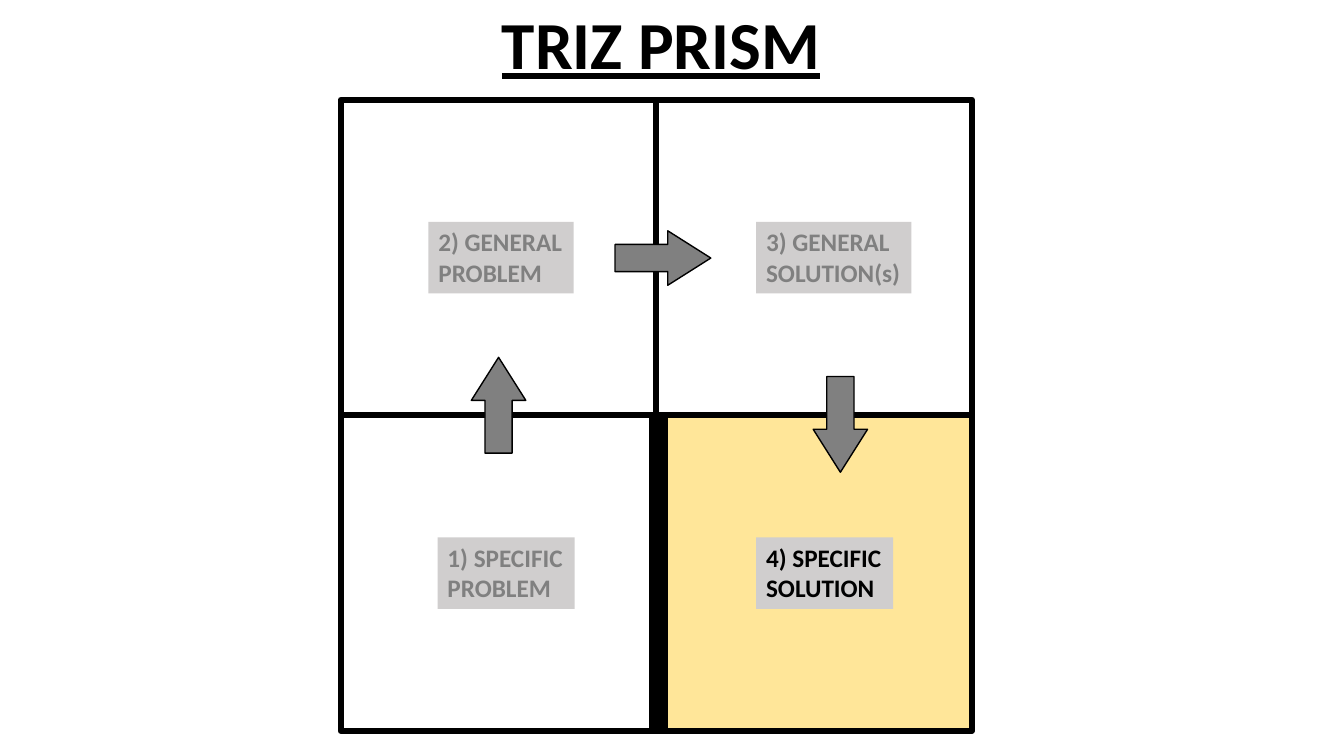
from dataclasses import dataclass

from lxml import etree
from pptx import Presentation
from pptx import util as u
from pptx.dml.color import RGBColor
from pptx.enum import shapes, text
from pptx.oxml.ns import qn

COLORS = {
    "ink": "000000",
    "muted": "808080",
    "label": "D0CECE",
    "highlight": "FFE699",
}
FONT = "Calibri"
GRID_LEFT, GRID_TOP, CELL = 3.38, 0.99, 3.13
LABEL_HEIGHT = 0.71
ARROW_WIDTH, ARROW_HEIGHT = 0.95, 0.54


@dataclass(frozen=True)
class Stage:
    column: int
    row: int
    lines: tuple[str, str]
    left: float
    width: float
    color: str = "muted"
    cell_fill: str | None = None


@dataclass(frozen=True)
class Step:
    left: float
    top: float
    rotation: int


STAGES = (
    Stage(0, 1, ("1) SPECIFIC", "PROBLEM"), 4.34, 1.36),
    Stage(0, 0, ("2) GENERAL", "PROBLEM"), 4.25, 1.44),
    Stage(1, 0, ("3) GENERAL", "SOLUTION(s)"), 7.5, 1.54),
    Stage(1, 1, ("4) SPECIFIC", "SOLUTION"), 7.5, 1.36, "ink", "highlight"),
)
STEPS = (Step(4.47, 3.75, 270), Step(6.1, 2.29, 0), Step(7.86, 3.94, 90))
BARRIER_XS = (6.48, 6.58)


def rgb(name: str) -> RGBColor:
    return RGBColor.from_string(COLORS[name])


def paint(shape, fill: str | None, line_width: float) -> None:
    shape.shadow.inherit = False
    if fill:
        shape.fill.solid()
        shape.fill.fore_color.rgb = rgb(fill)
    else:
        shape.fill.background()
    shape.line.color.rgb = rgb("ink")
    shape.line.width = u.Pt(line_width)


def draw_cell(slide, stage: Stage) -> None:
    cell = slide.shapes.add_shape(
        shapes.MSO_SHAPE.RECTANGLE,
        u.Inches(GRID_LEFT + stage.column * CELL),
        u.Inches(GRID_TOP + stage.row * CELL),
        u.Inches(CELL), u.Inches(CELL))
    paint(cell, stage.cell_fill, 4.5)


def draw_barrier(slide, x: float) -> None:
    middle = GRID_TOP + CELL
    barrier = slide.shapes.add_connector(
        shapes.MSO_CONNECTOR.STRAIGHT,
        u.Inches(x), u.Inches(middle), u.Inches(x), u.Inches(middle + CELL))
    barrier.line.color.rgb = rgb("ink")
    barrier.line.width = u.Pt(6)
    etree.SubElement(barrier.element.spPr, qn("a:effectLst"))


def draw_step(slide, step: Step) -> None:
    arrow = slide.shapes.add_shape(
        shapes.MSO_SHAPE.RIGHT_ARROW, u.Inches(step.left), u.Inches(step.top),
        u.Inches(ARROW_WIDTH), u.Inches(ARROW_HEIGHT))
    arrow.adjustments[0] = 0.5
    arrow.adjustments[1] = 0.79
    arrow.rotation = step.rotation
    paint(arrow, "muted", 1)


def draw_text(slide, lines: tuple[str, ...], left: float, top: float,
              width: float, height: float, size: int, color: str):
    box = slide.shapes.add_textbox(
        u.Inches(left), u.Inches(top), u.Inches(width), u.Inches(height))
    frame = box.text_frame
    frame.text = "\n".join(lines)
    frame.word_wrap = False
    frame.auto_size = text.MSO_AUTO_SIZE.SHAPE_TO_FIT_TEXT
    for paragraph in frame.paragraphs:
        font = paragraph.font
        font.name, font.size, font.bold = FONT, u.Pt(size), True
        font.color.rgb = rgb(color)
    return box


def draw_label(slide, stage: Stage) -> None:
    # Labels of both rows sit at the same height within their cells
    top = 2.2 + stage.row * CELL
    label = draw_text(slide, stage.lines, stage.left, top, stage.width,
                      LABEL_HEIGHT, 18, stage.color)
    label.fill.solid()
    label.fill.fore_color.rgb = rgb("label")


def main() -> None:
    prs = Presentation()
    prs.slide_width, prs.slide_height = u.Inches(13.33), u.Inches(7.5)
    slide = prs.slides.add_slide(prs.slide_layouts[6])

    # Four quadrants, with a barrier between the specific ones
    for stage in STAGES:
        draw_cell(slide, stage)
    for x in BARRIER_XS:
        draw_barrier(slide, x)

    # Stage labels and the path between them
    for stage in STAGES:
        draw_label(slide, stage)
    for step in STEPS:
        draw_step(slide, step)

    # Title
    title = draw_text(slide, ("TRIZ PRISM",), 4.88, -0.03, 3.39, 0.91, 48, "ink")
    title.text_frame.paragraphs[0].font.underline = True

    prs.save("out.pptx")


if __name__ == "__main__":
    main()
